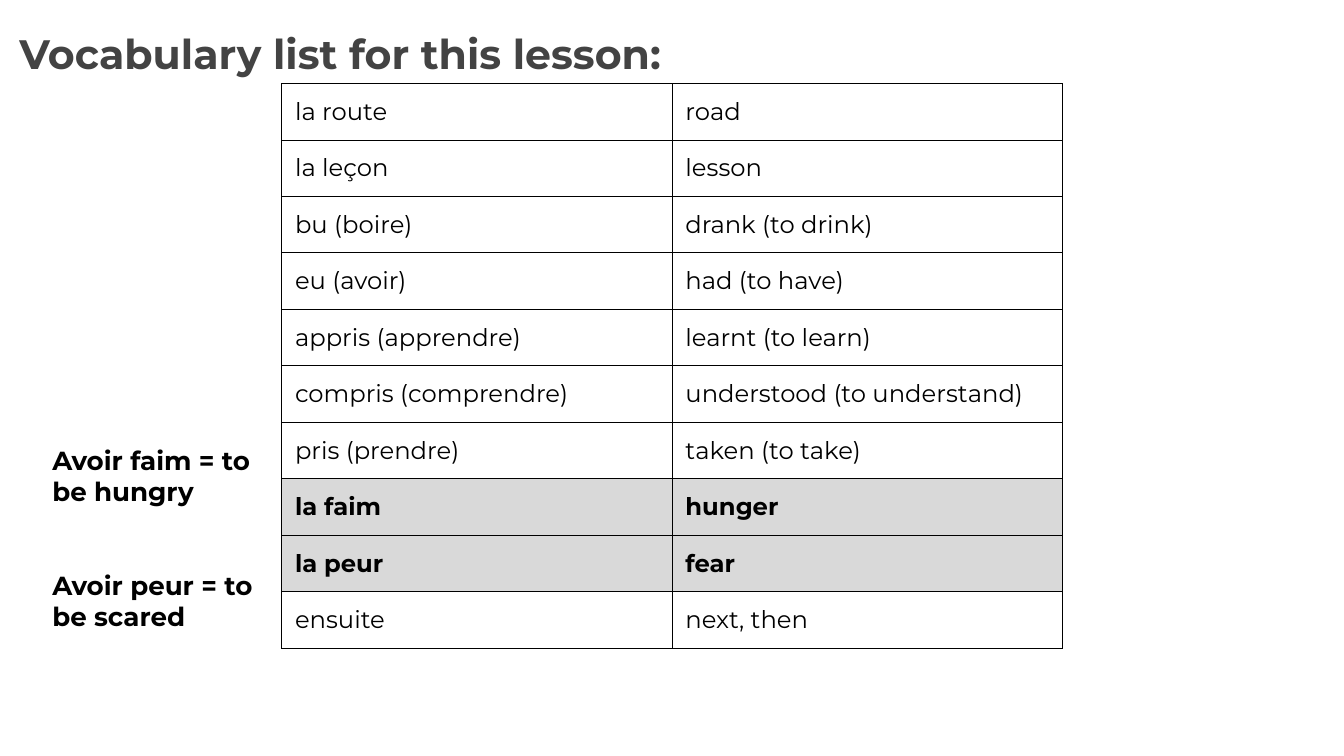
import dataclasses
import typing

import lxml.etree
import pptx
import pptx.dml.color
import pptx.enum.text
import pptx.oxml.ns
import pptx.util

Inches = pptx.util.Inches
Pt = pptx.util.Pt


@dataclasses.dataclass(frozen=True)
class Theme:
    font: str = "Montserrat"
    heading: str = "434343"
    ink: str = "000000"
    highlight: str = "D9D9D9"
    title_size: float = 44
    word_size: float = 26
    note_size: float = 28
    border_width: float = 0.75


class Entry(typing.NamedTuple):
    french: str
    english: str
    highlighted: bool = False


THEME = Theme()
VOCABULARY = [
    Entry("la route", "road"),
    Entry("la leçon", "lesson"),
    Entry("bu (boire)", "drank (to drink)"),
    Entry("eu (avoir)", "had (to have)"),
    Entry("appris (apprendre)", "learnt (to learn)"),
    Entry("compris (comprendre)", "understood (to understand)"),
    Entry("pris (prendre)", "taken (to take)"),
    Entry("la faim", "hunger", True),
    Entry("la peur", "fear", True),
    Entry("ensuite", "next, then"),
]
EXPRESSIONS = ["Avoir faim = to be hungry", "Avoir peur = to be scared"]
COLUMN_WIDTH, ROW_HEIGHT = 5.81, 0.84


def style(paragraph, size: float, color: str, bold: bool) -> None:
    paragraph.alignment = pptx.enum.text.PP_ALIGN.LEFT
    paragraph.font.name = THEME.font
    paragraph.font.size = Pt(size)
    paragraph.font.bold = bold
    paragraph.font.color.rgb = pptx.dml.color.RGBColor.from_string(color)


def set_margins(target, inset: float) -> None:
    """Give a text frame or table cell the same inset on every side."""
    target.margin_left = target.margin_right = Inches(inset)
    target.margin_top = target.margin_bottom = Inches(inset)


def add_borders(cell) -> None:
    properties = cell._tc.get_or_add_tcPr()
    qn = pptx.oxml.ns.qn
    for position, side in enumerate(("a:lnL", "a:lnR", "a:lnT", "a:lnB")):
        line = lxml.etree.Element(qn(side), w=str(Pt(THEME.border_width)))
        fill = lxml.etree.SubElement(line, qn("a:solidFill"))
        lxml.etree.SubElement(fill, qn("a:srgbClr"), val=THEME.ink)
        properties.insert(position, line)


def fill_cell(cell, word: str, highlighted: bool) -> None:
    cell.text = word
    set_margins(cell, 0.2)
    style(cell.text_frame.paragraphs[0], THEME.word_size, THEME.ink, highlighted)
    if highlighted:
        cell.fill.solid()
        cell.fill.fore_color.rgb = pptx.dml.color.RGBColor.from_string(THEME.highlight)
    else:
        cell.fill.background()
    add_borders(cell)


def add_title(slide, text: str) -> None:
    title = slide.shapes.title
    title.left, title.top = Inches(0.29), Inches(0.32)
    title.width, title.height = Inches(13.97), Inches(0.82)
    frame = title.text_frame
    frame.text = text
    frame.auto_size = pptx.enum.text.MSO_AUTO_SIZE.NONE
    frame.vertical_anchor = pptx.enum.text.MSO_ANCHOR.TOP
    set_margins(frame, 0)
    heading = frame.paragraphs[0]
    heading.line_spacing = 1.15
    heading.space_before = Pt(0)
    style(heading, THEME.title_size, THEME.heading, True)


def add_vocabulary(slide, entries: list[Entry]) -> None:
    vocabulary = slide.shapes.add_table(
        len(entries), 2, Inches(4.19), Inches(1.24),
        Inches(2 * COLUMN_WIDTH), Inches(ROW_HEIGHT * len(entries)),
    ).table
    vocabulary.first_row = vocabulary.horz_banding = False
    for column in vocabulary.columns:
        column.width = Inches(COLUMN_WIDTH)
    for row, entry in zip(vocabulary.rows, entries):
        row.height = Inches(ROW_HEIGHT)
        for cell, word in zip(row.cells, (entry.french, entry.english)):
            fill_cell(cell, word, entry.highlighted)


def add_expressions(slide, expressions: list[str]) -> None:
    frame = slide.shapes.add_textbox(
        Inches(0.68), Inches(6.51), Inches(3.2), Inches(3.38)
    ).text_frame
    frame.word_wrap = True
    set_margins(frame, 0.1)
    frame.text = "\n".join(expressions)
    for index, expression in enumerate(frame.paragraphs):
        expression.space_before = Pt(67 if index else 0)
        style(expression, THEME.note_size, THEME.ink, True)


def main() -> None:
    lesson = pptx.Presentation()
    lesson.slide_width, lesson.slide_height = Inches(20), Inches(11.25)
    slide = lesson.slides.add_slide(lesson.slide_layouts[5])  # Title Only

    # Heading
    add_title(slide, "Vocabulary list for this lesson:")
    # French and English word pairs
    add_vocabulary(slide, VOCABULARY)
    # Expressions built on the highlighted words
    add_expressions(slide, EXPRESSIONS)

    lesson.save("out.pptx")


if __name__ == "__main__":
    main()
